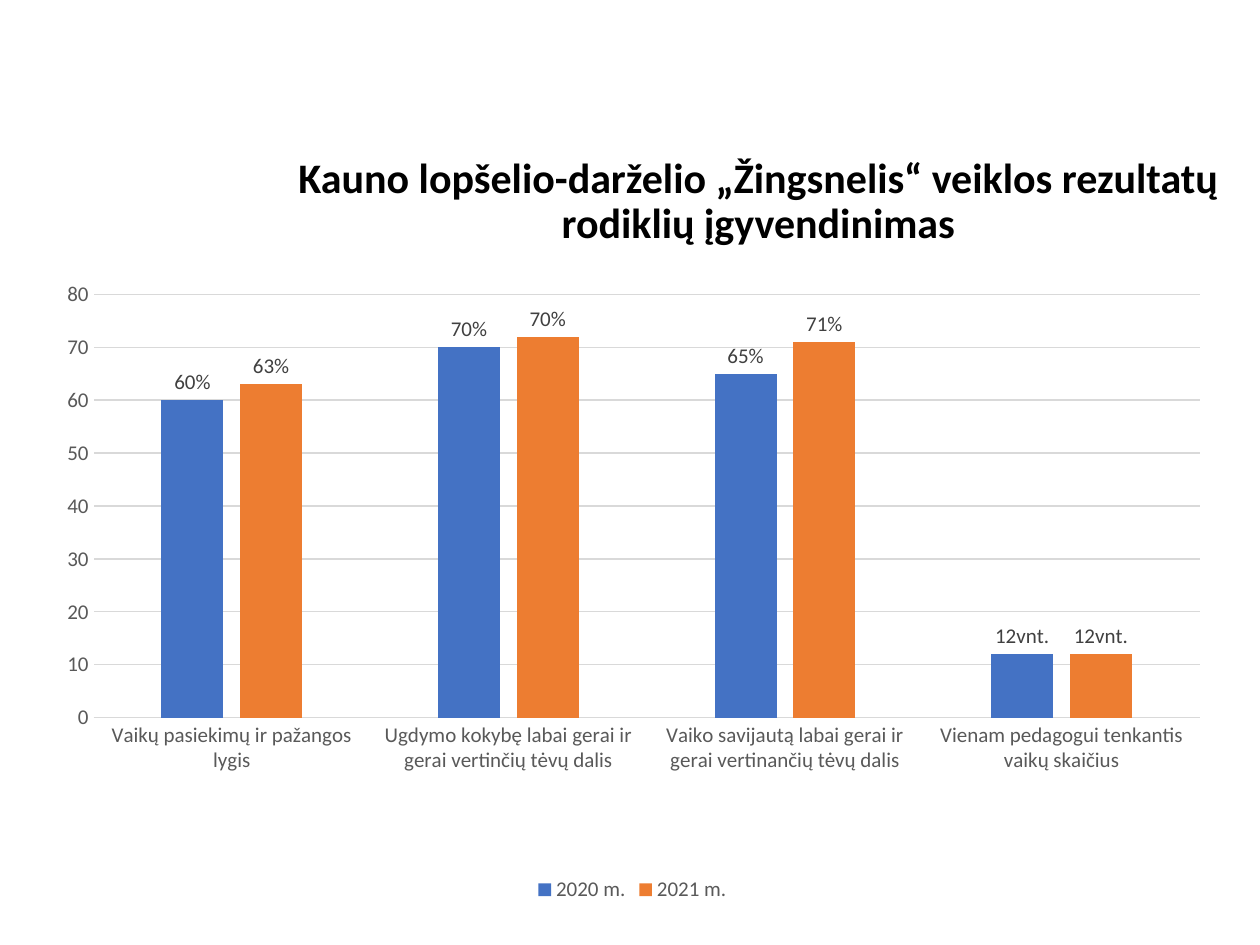
from lxml import etree
from pptx import Presentation
from pptx import util as u
from pptx.chart.data import CategoryChartData
from pptx.dml.color import RGBColor
from pptx.enum import chart as charts, text
from pptx.oxml.ns import qn

FONT = "Calibri"
AXIS_TEXT, LABEL_TEXT, GRID = "595959", "404040", "D9D9D9"
CATEGORIES = [
    "Vaikų pasiekimų ir pažangos lygis",
    "Ugdymo kokybę labai gerai ir gerai vertinčių tėvų dalis",
    "Vaiko savijautą labai gerai ir gerai vertinančių tėvų dalis",
    "Vienam pedagogui tenkantis vaikų skaičius",
]
# name, colour, values, labels
SERIES = [
    ("2020 m.", "4472C4", (60, 70, 65, 12), ("60%", "70%", "65%", "12vnt.")),
    ("2021 m.", "ED7D31", (63, 72, 71, 12), ("63%", "70%", "71%", "12vnt.")),
]


def colour(value):
    return RGBColor.from_string(value)


def format_font(font, size=12, hue=AXIS_TEXT, bold=False):
    font.name = FONT
    font.size = u.Pt(size)
    font.bold = bold
    font.color.rgb = colour(hue)


def write_text(frame, words, align=None, spacing=None, **style):
    para = frame.paragraphs[0]
    para.alignment = align
    para.line_spacing = spacing
    span = para.add_run()
    span.text = words
    format_font(span.font, **style)


def place(shape, left, top, width, height):
    shape.left, shape.top = u.Cm(left), u.Cm(top)
    shape.width, shape.height = u.Cm(width), u.Cm(height)


def add_title(slide, words):
    title = slide.shapes.title
    place(title, 5.56, 2.64, 19.46, 2.87)
    title.text_frame.word_wrap = True
    title.text_frame.vertical_anchor = text.MSO_ANCHOR.MIDDLE
    write_text(title.text_frame, words, align=text.PP_ALIGN.CENTER,
               spacing=0.9, size=24, hue="000000", bold=True)


def format_line(line):
    line.color.rgb = colour(GRID)
    line.width = u.Pt(0.75)


def format_axes(chart):
    for axis in (chart.category_axis, chart.value_axis):
        axis.major_tick_mark = axis.minor_tick_mark = charts.XL_TICK_MARK.NONE
        format_font(axis.tick_labels.font)
    format_line(chart.category_axis.format.line)
    values = chart.value_axis
    values.minimum_scale, values.maximum_scale, values.major_unit = 0, 80, 10
    values.format.line.fill.background()
    values.has_major_gridlines = True
    format_line(values.major_gridlines.format.line)


def format_series(series, hue, labels):
    series.format.fill.solid()
    series.format.fill.fore_color.rgb = colour(hue)
    series.invert_if_negative = False
    outside = charts.XL_LABEL_POSITION.OUTSIDE_END
    series.data_labels.show_value = True
    series.data_labels.position = outside
    format_font(series.data_labels.font, hue=LABEL_TEXT)
    for index, words in enumerate(labels):
        label = series.points[index].data_label
        write_text(label.text_frame, words, hue=LABEL_TEXT)
        label.position = outside


def set_plot_layout(chart, **fractions):
    """Fix the inner plot area as fractions (x, y, w, h) of the chart."""
    area = chart.element.find(".//" + qn("c:plotArea"))
    for old in area.findall(qn("c:layout")):
        area.remove(old)
    layout = etree.Element(qn("c:layout"))
    area.insert(0, layout)
    manual = etree.SubElement(layout, qn("c:manualLayout"))
    settings = {"layoutTarget": "inner", "xMode": "edge", "yMode": "edge", **fractions}
    for tag, value in settings.items():
        etree.SubElement(manual, qn("c:" + tag), val=str(value))


def add_column_chart(slide):
    data = CategoryChartData()
    data.categories = CATEGORIES
    for name, _, values, _ in SERIES:
        data.add_series(name, values)
    frame = slide.shapes.add_chart(
        charts.XL_CHART_TYPE.COLUMN_CLUSTERED,
        u.Cm(0.81), u.Cm(5.51), u.Cm(23.88), u.Cm(12.78), data)
    chart = frame.chart
    format_font(chart.font, size=10, hue="000000")
    chart.has_title = False
    chart.has_legend = True
    chart.legend.position = charts.XL_LEGEND_POSITION.BOTTOM
    chart.legend.include_in_layout = False
    format_font(chart.legend.font)
    plot = chart.plots[0]
    plot.gap_width, plot.overlap = 219, -27
    plot.vary_by_categories = False
    for series, (_, hue, _, labels) in zip(plot.series, SERIES):
        format_series(series, hue, labels)
    format_axes(chart)
    set_plot_layout(chart, x=0.045, y=0.033, w=0.934, h=0.668)


def main():
    deck = Presentation()
    deck.slide_width, deck.slide_height = u.Cm(25.4), u.Cm(19.05)
    slide = deck.slides.add_slide(deck.slide_layouts[5])
    add_title(slide, "Kauno lopšelio-darželio „Žingsnelis“ veiklos rezultatų "
                     "rodiklių įgyvendinimas")
    add_column_chart(slide)
    deck.save("out.pptx")


if __name__ == "__main__":
    main()
